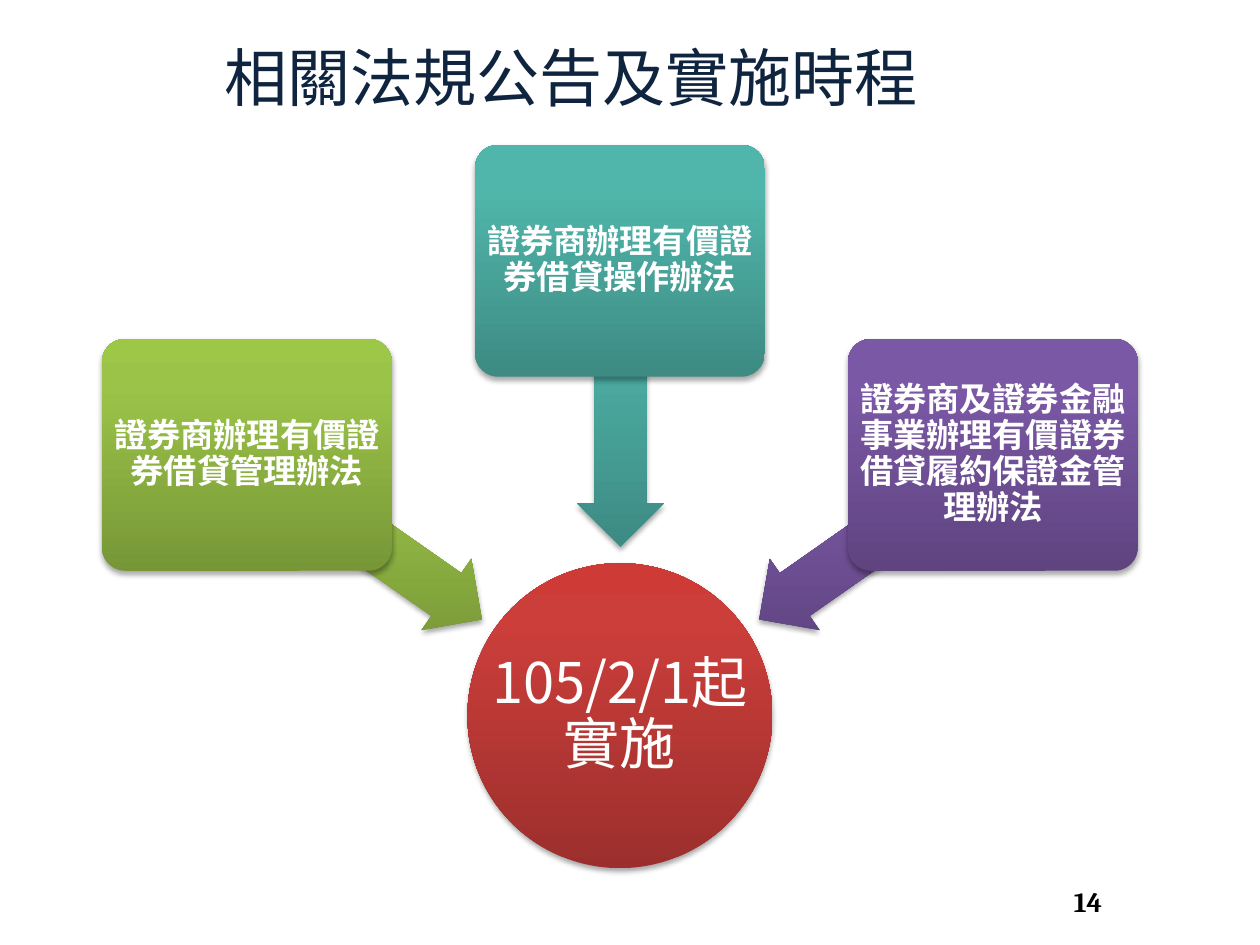
from dataclasses import dataclass

from lxml.etree import SubElement
from pptx import Presentation
from pptx.dml.color import RGBColor
from pptx.enum.shapes import MSO_SHAPE as SHAPE
from pptx.enum.text import MSO_ANCHOR as ANCHOR, PP_ALIGN as ALIGN
from pptx.oxml import parse_xml
from pptx.oxml.ns import nsdecls, qn
from pptx.util import Inches, Pt


@dataclass(frozen=True)
class Theme:
    serif: str = "Cambria"
    sans: str = "Noto Sans CJK SC"
    navy: str = "0F243E"
    black: str = "000000"
    white: str = "FFFFFF"
    red: tuple = ("9C2F2D", "CB3E3A", "CE3B37")
    green: tuple = ("779737", "9BC348", "9DC746")
    teal: tuple = ("3D8B83", "50B5AA", "4EB8AC")
    purple: tuple = ("5F4480", "7B58A6", "7C57A8")
    title_size: int = 36
    hub_size: int = 32
    box_size: int = 19
    number_size: int = 16


class SlideBuilder:
    def __init__(self, slide, theme):
        self.slide = slide
        self.theme = theme

    def set_text(self, sp, text, size, color, font, bold=False, inset=None, spacing=None):
        tf = sp.text_frame
        tf.word_wrap = True
        tf.vertical_anchor = ANCHOR.MIDDLE
        if inset is not None:
            tf.margin_left = tf.margin_right = Inches(inset)
            tf.margin_top = tf.margin_bottom = Inches(inset)
        p = tf.paragraphs[0]
        p.alignment = ALIGN.CENTER
        if spacing:
            p.line_spacing = spacing
        r = p.add_run()
        r.text = text
        r.font.size = Pt(size)
        r.font.bold = bold
        r.font.name = font
        r.font.color.rgb = RGBColor.from_string(color)
        if font == self.theme.sans:
            SubElement(r.font._element, qn("a:ea")).set("typeface", font)

    def title(self, text, x, y, w, h):
        sp = self.slide.shapes.title
        sp.left, sp.top, sp.width, sp.height = map(Inches, (x, y, w, h))
        self.set_text(sp, text, self.theme.title_size, self.theme.navy, self.theme.serif)

    def text(self, text, x, y, w, h, *style, **options):
        sp = self.slide.shapes.add_textbox(*map(Inches, (x, y, w, h)))
        self.set_text(sp, text, *style, **options)

    def shape(self, kind, x, y, w, h, colors, adjustments=(), rotation=0):
        sp = self.slide.shapes.add_shape(kind, *map(Inches, (x, y, w, h)))
        sp.rotation = rotation
        for i, value in enumerate(adjustments):
            sp.adjustments[i] = value
        sp.line.fill.background()
        sp.fill.background()
        stops = "".join(
            f'<a:gs pos="{pos}"><a:srgbClr val="{color}"/></a:gs>'
            for pos, color in zip((0, 80000, 100000), colors))
        spPr = sp._element.spPr
        spPr.replace(spPr.find(qn("a:noFill")), parse_xml(
            f'<a:gradFill {nsdecls("a")} rotWithShape="0"><a:gsLst>{stops}</a:gsLst>'
            '<a:lin ang="16200000" scaled="0"/></a:gradFill>'))
        sp.shadow.inherit = False
        spPr.find(qn("a:effectLst")).append(parse_xml(
            f'<a:outerShdw {nsdecls("a")} blurRad="{Pt(3.1)}" dist="{Pt(1.8)}" '
            f'dir="5400000" rotWithShape="0"><a:srgbClr val="{self.theme.black}">'
            '<a:alpha val="35000"/></a:srgbClr></a:outerShdw>'))
        return sp

    def arrow(self, x, y, rotation, colors):
        self.shape(SHAPE.LEFT_ARROW, x, y, 2.27, 0.69, colors, (0.6, 0.5), rotation)

    def box(self, text, x, y, colors):
        sp = self.shape(SHAPE.ROUNDED_RECTANGLE, x, y, 2.3, 1.84, colors, (0.1,))
        self.set_text(sp, text, self.theme.box_size, self.theme.white, self.theme.sans,
                      bold=True, inset=0, spacing=0.9)

    def hub(self, text, x, y, size, colors):
        self.shape(SHAPE.OVAL, x, y, size, size, colors)
        self.text(text, x, y, size, size, self.theme.hub_size, self.theme.white,
                  self.theme.sans, inset=0.02, spacing=0.9)


def main():
    prs = Presentation()
    prs.slide_width, prs.slide_height = Inches(10), Inches(7.5)
    theme = Theme()
    s = SlideBuilder(prs.slides.add_slide(prs.slide_layouts[5]), theme)

    s.title("相關法規公告及實施時程", 1.38, 0.21, 6.3, 0.79)
    s.text("14", 7.47, 6.95, 2.33, 0.4, theme.number_size, theme.black,
           theme.serif, bold=True)
    s.hub("105/2/1起實施", 3.71, 4.47, 2.42, theme.red)

    regulations = [
        ("證券商辦理有價證券借貸管理辦法", theme.green, 2.69, 3.92),
        ("證券商辦理有價證券借貸操作辦法", theme.teal, 1.15, 2.86),
        ("證券商及證券金融事業辦理有價證券借貸履約保證金管理辦法", theme.purple, 2.69, 3.92),
    ]
    for i, (text, colors, box_y, arrow_y) in enumerate(regulations):
        s.arrow(1.76 + 2.03 * i, arrow_y, 215 + 55 * i, colors)
        s.box(text, 0.81 + 2.96 * i, box_y, colors)

    prs.save("out.pptx")


if __name__ == "__main__":
    main()
